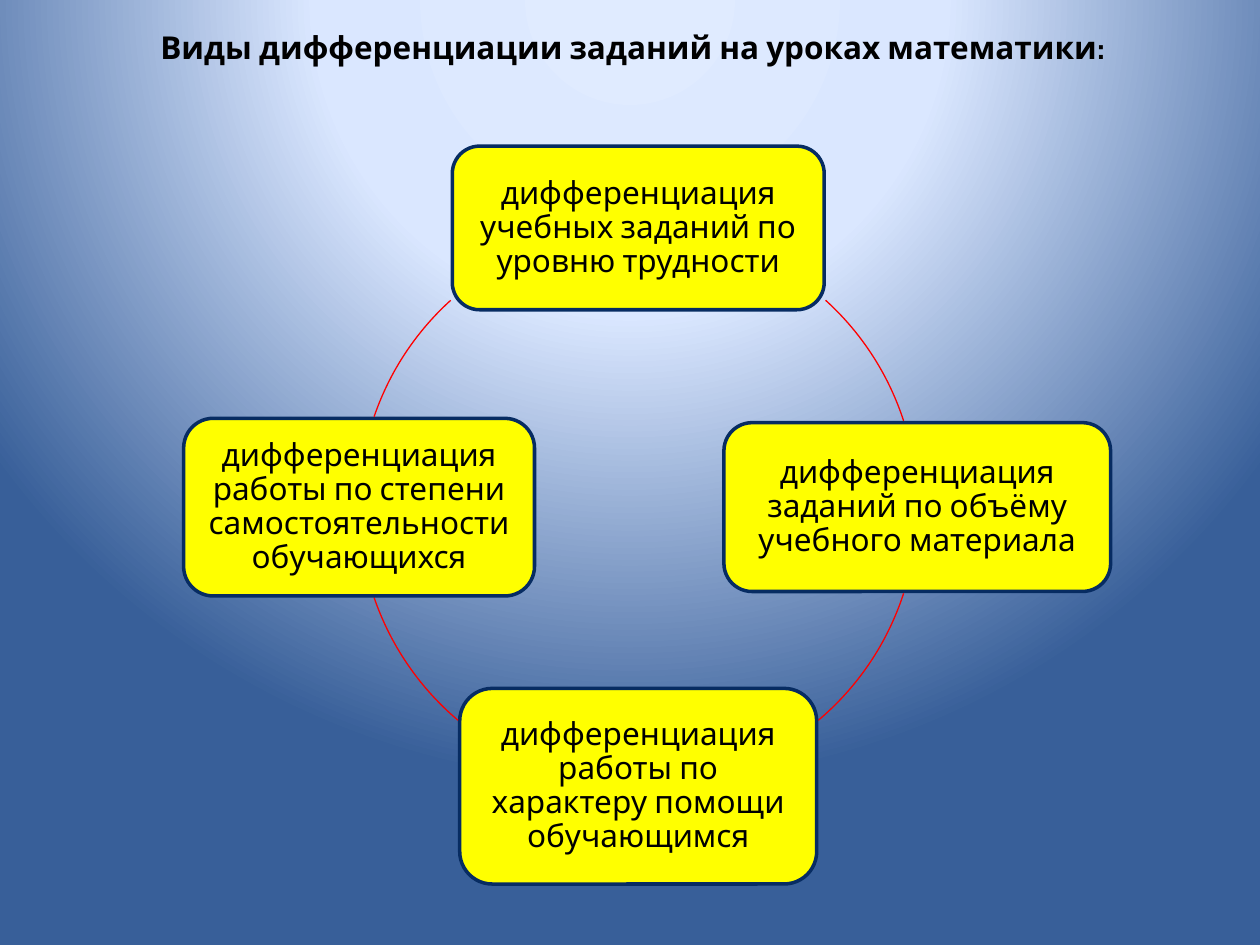
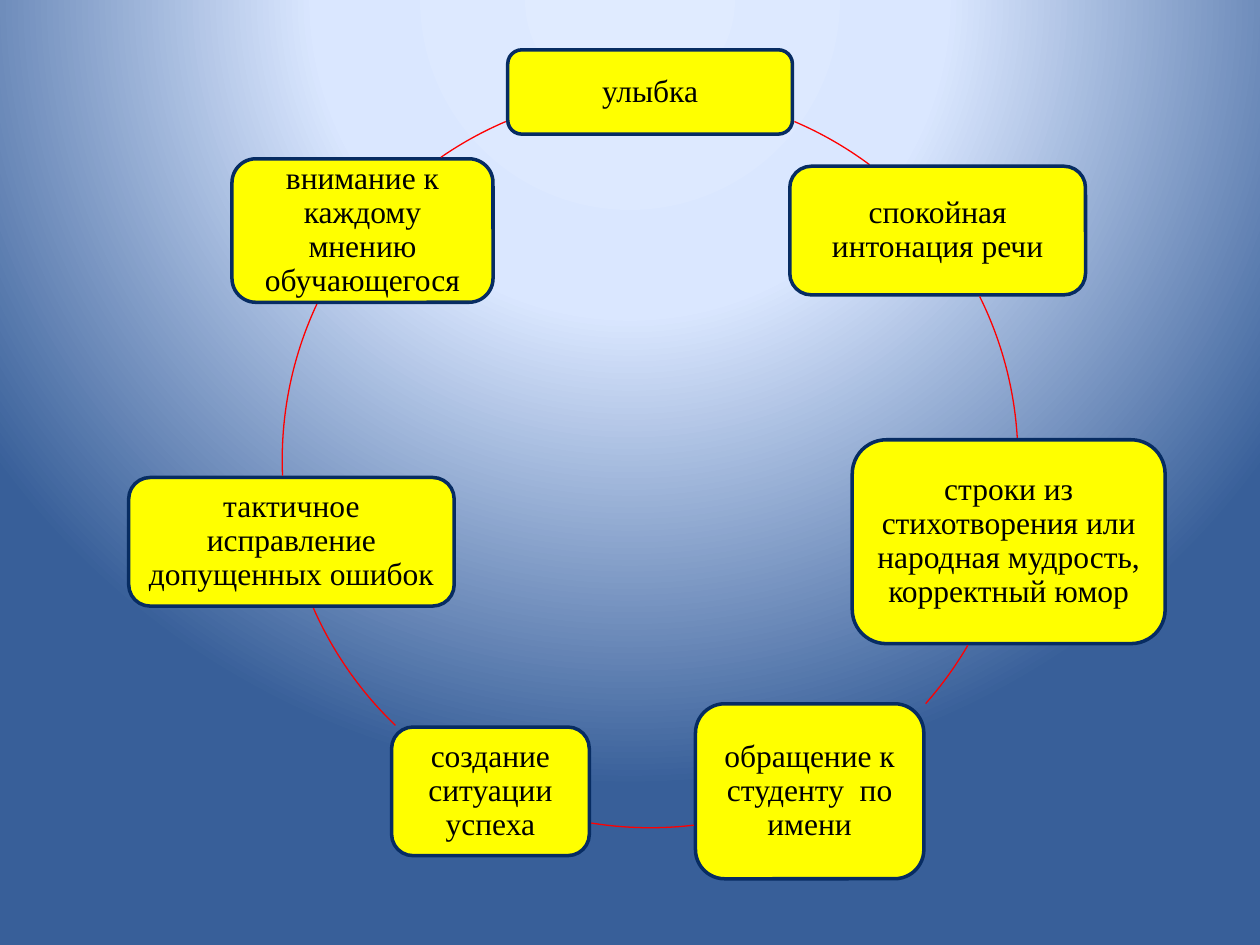
from math import cos, radians, sin

from pptx import Presentation
from pptx.dml.color import RGBColor
from pptx.enum.shapes import MSO_SHAPE as SHAPE
from pptx.enum.text import MSO_ANCHOR as ANCHOR, MSO_AUTO_SIZE as AUTO, PP_ALIGN as ALIGN
from pptx.oxml import parse_xml
from pptx.oxml.ns import nsdecls, qn
from pptx.util import Pt

# Content: each ring lists (text, width, height) clockwise from the top, in points
RINGS = [
    {
        "title": "Виды дифференциации заданий на уроках математики:",
        "font": "Cabin", "center": (364.7, 289.8), "radius": 159.5,
        "boxes": [
            ("дифференциация учебных заданий по уровню трудности", 212.5, 93.5),
            ("дифференциация заданий по объёму учебного материала", 221, 96.5),
            ("дифференциация работы по характеру помощи обучающимся", 204, 111.8),
            ("дифференциация работы по степени самостоятельности обучающихся", 200.5, 101.5),
        ],
    },
    {
        "title": None,
        "font": "Times New Roman", "center": (371.5, 262.8), "radius": 210.2,
        "boxes": [
            ("улыбка", 162.7, 48.2),
            ("спокойная интонация речи", 169, 73.5),
            ("строки из стихотворения или народная мудрость, корректный юмор", 178.8, 116.5),
            ("обращение к студенту  по имени", 130.5, 100),
            ("создание ситуации успеха", 113, 73.5),
            ("тактичное исправление допущенных ошибок", 186, 73.5),
            ("внимание к каждому мнению обучающегося", 149.2, 82),
        ],
    },
]

# Shared style
COLORS = {"glow": "E0EBFF", "sky": "DAE7FF", "deep": "385F99",
          "box": "FFFF00", "edge": "072C62", "arc": "FF0000", "text": "000000"}
TEXT_SIZE = 18
INSET = 5
ARC_GAP = 0.8
TITLE_AT = (78.5, 12.2, 566, 29)


def rgb(name):
    return RGBColor.from_string(COLORS[name])


def set_background(master):
    master.background.fill.solid()
    bg = master.element.find(".//" + qn("p:bgPr"))
    stops = "".join(f'<a:gs pos="{pos * 1000}"><a:srgbClr val="{COLORS[name]}"/></a:gs>'
                    for pos, name in ((0, "glow"), (40, "sky"), (100, "deep")))
    bg.replace(bg[0], parse_xml(
        f'<a:gradFill {nsdecls("a")} rotWithShape="1"><a:gsLst>{stops}</a:gsLst>'
        '<a:path path="circle"><a:fillToRect l="50000" t="-80000" r="50000" b="180000"/>'
        '</a:path></a:gradFill>'))


def write(tf, text, font, bold=False):
    tf.word_wrap = True
    p = tf.paragraphs[0]
    p.alignment = ALIGN.CENTER
    r = p.add_run()
    r.text = text
    r.font.name, r.font.size, r.font.bold = font, Pt(TEXT_SIZE), bold
    r.font.color.rgb = rgb("text")
    return p


def add_title(s, text, font):
    sp = s.shapes.title
    sp.left, sp.top, sp.width, sp.height = map(Pt, TITLE_AT)
    tf = sp.text_frame
    tf.auto_size = AUTO.SHAPE_TO_FIT_TEXT
    tf.vertical_anchor = ANCHOR.TOP
    write(tf, text, font, bold=True)


def add_outlined(s, kind, center, w, h, line, weight):
    x, y = center
    sp = s.shapes.add_shape(kind, Pt(x - w / 2), Pt(y - h / 2), Pt(w), Pt(h))
    sp.shadow.inherit = False
    sp.line.color.rgb = rgb(line)
    sp.line.width = Pt(weight)
    return sp


def add_box(s, center, text, w, h, font):
    sp = add_outlined(s, SHAPE.ROUNDED_RECTANGLE, center, w, h, "edge", 2)
    sp.fill.solid()
    sp.fill.fore_color.rgb = rgb("box")
    tf = sp.text_frame
    tf.margin_left = tf.margin_right = tf.margin_top = tf.margin_bottom = Pt(INSET)
    tf.vertical_anchor = ANCHOR.MIDDLE
    write(tf, text, font).line_spacing = 0.9


def leave_angle(angle, radius, w, h, step):
    """Walk along the ring from a box centre until the ring leaves the box."""
    def offset(fn, a):
        return abs(fn(radians(a)) - fn(radians(angle))) * radius

    a = angle
    while offset(cos, a) < w / 2 + ARC_GAP and offset(sin, a) < h / 2 + ARC_GAP:
        a += step
    return a


def add_arc(s, center, radius, start, end):
    sp = add_outlined(s, SHAPE.ARC, center, 2 * radius, 2 * radius, "arc", 0.75)
    sp.fill.background()
    # Arc angles are stored in 60000ths of a degree, adjustments in 100000ths
    for i, angle in enumerate((start, end)):
        sp.adjustments[i] = angle % 360 * 0.6


def add_ring(s, ring):
    (cx, cy), radius, boxes = ring["center"], ring["radius"], ring["boxes"]
    n = len(boxes)
    angles = [360 * i / n - 90 for i in range(n)]
    for i, (text, w, h) in enumerate(boxes):
        a = radians(angles[i])
        add_box(s, (cx + radius * cos(a), cy + radius * sin(a)), text, w, h, ring["font"])
        j = (i + 1) % n
        start = leave_angle(angles[i], radius, w, h, 0.1)
        end = leave_angle(angles[j], radius, *boxes[j][1:], -0.1)
        add_arc(s, (cx, cy), radius, start, end)


def main():
    prs = Presentation()
    prs.slide_width, prs.slide_height = Pt(720), Pt(540)
    set_background(prs.slide_master)
    title_only, blank = prs.slide_layouts[5], prs.slide_layouts[6]
    for ring in RINGS:
        s = prs.slides.add_slide(title_only if ring["title"] else blank)
        if ring["title"]:
            add_title(s, ring["title"], ring["font"])
        add_ring(s, ring)
    prs.save("out.pptx")


if __name__ == "__main__":
    main()
